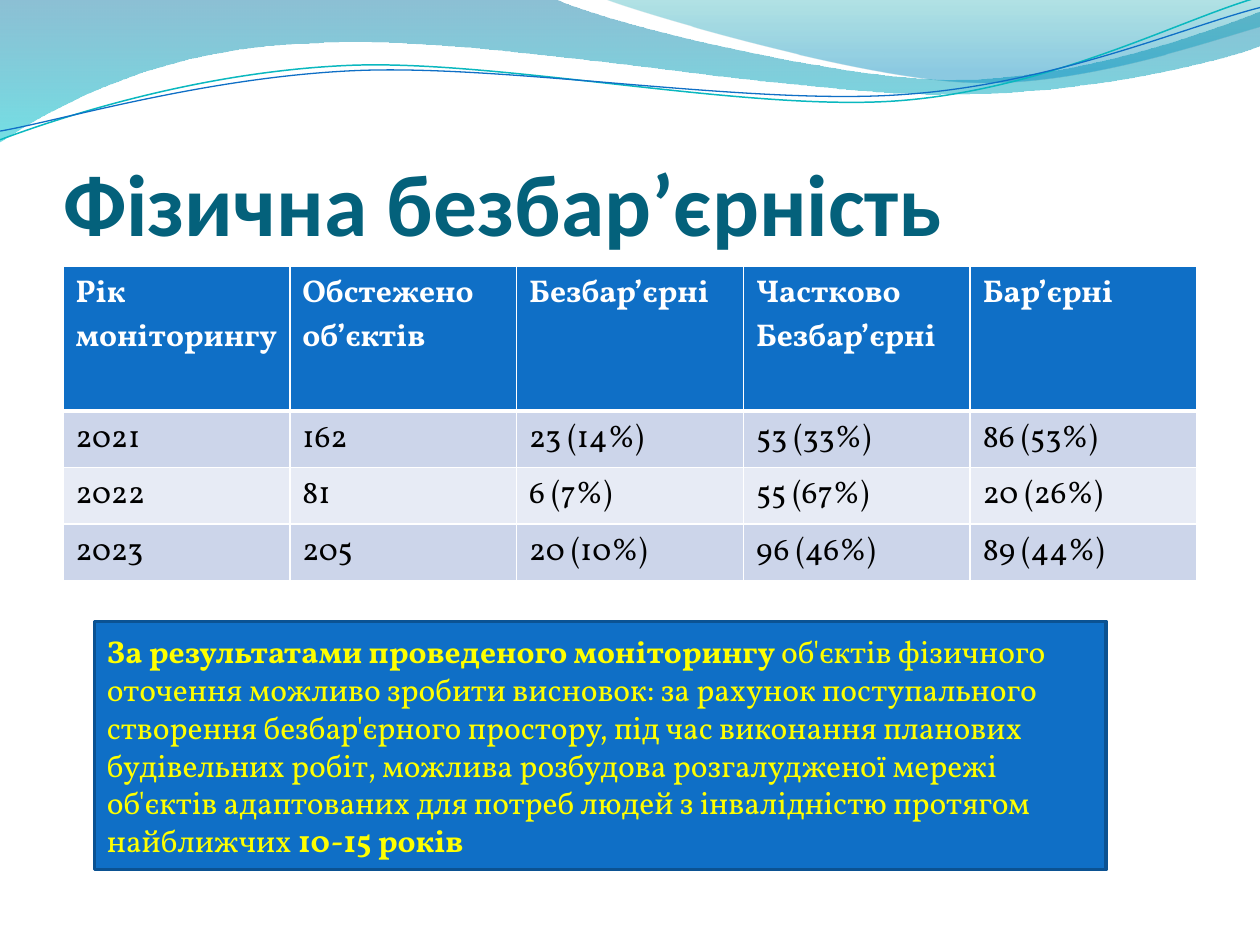
from dataclasses import dataclass

from lxml import etree
from pptx import Presentation
from pptx.dml.color import RGBColor
from pptx.enum.shapes import MSO_SHAPE
from pptx.enum.text import MSO_ANCHOR, MSO_AUTO_SIZE, PP_ALIGN
from pptx.oxml.ns import qn
from pptx.util import Pt

RECTANGLE = MSO_SHAPE.RECTANGLE
BOTTOM, MIDDLE = MSO_ANCHOR.BOTTOM, MSO_ANCHOR.MIDDLE
NO_AUTOFIT = MSO_AUTO_SIZE.NONE
LEFT = PP_ALIGN.LEFT
TITLE_ONLY = 5


@dataclass(frozen=True)
class Theme:
    heading_font: str = "Calibri"
    body_font: str = "Vollkorn"
    title_size: int = 50
    body_size: int = 18
    title: str = "04617B"
    accent: str = "0F6FC6"
    accent_dark: str = "0B5292"
    teal: str = "0AB8BF"
    odd_row: str = "CCD5EA"
    even_row: str = "E7EBF5"
    white: str = "FFFFFF"
    black: str = "000000"
    highlight: str = "FFFF00"
    broad_wave: tuple = ((0, "0074A1", 45), (1, "00C6CF", 55))
    corner_wave: tuple = ((0, "00A1A9", 30), (0.8, "008BBF", 45))


THEME = Theme()

BROAD_WAVE = [
    (0, 0),
    [(316.8, -0.7)],
    [(342.7, 12.2), (478.1, 45.4), (545.8, 45.4)],
    [(614.2, 45.4), (689.8, 18.7), (720, 6.5)],
    [(720.7, 25.9)],
    [(707.8, 31.7), (626.4, 54.7), (537.1, 54)],
    [(447.8, 54), (275, 20.2), (185, 24.5)],
    [(92.9, 25.9), (33.1, 59.8), (-0.7, 81.4)],
    [(0, 0)],
]
CORNER_WAVE = [
    (344.9, -0.7),
    [(366.5, 7.9), (491, 44.6), (553.7, 46.8)],
    [(616.3, 49.7), (691.9, 23), (720, 15.1)],
    [(720, 0)],
    [(344.9, -0.7)],
]
TEAL_STRAND = [
    (0, 79.9),
    [(34.6, 67), (113.8, 41), (199.4, 37.4)],
    [(284.4, 33.8), (427, 64.1), (513.4, 57.6)],
    [(599.8, 51.1), (675.4, 10.8), (718.6, -1.4)],
]
BLUE_STRAND = [
    (0, 74.9),
    [(33.8, 69.1), (118.1, 43.9), (203.8, 40.3)],
    [(290.2, 36.7), (429.8, 60.5), (516.2, 54)],
    [(601.9, 48.2), (677.5, 15.1), (720, 4.3)],
]

MONITORING = [
    ["Рік моніторингу", "Обстежено об’єктів", "Безбар’єрні", "Частково Безбар’єрні", "Бар’єрні"],
    ["2021", "162", "23 (14%)", "53 (33%)", "86 (53%)"],
    ["2022", "81", "6 (7%)", "55 (67%)", "20 (26%)"],
    ["2023", "205", "20 (10%)", "96 (46%)", "89 (44%)"],
]
CONCLUSION = [
    ("За результатами проведеного моніторингу ", True),
    ("об'єктів фізичного оточення можливо зробити висновок: за рахунок поступального "
     "створення безбар'єрного простору, під час виконання планових будівельних робіт, "
     "можлива розбудова розгалудженої мережі об'єктів адаптованих для потреб людей "
     "з інвалідністю протягом найближчих ", False),
    ("10-15 років", True),
]


def rgb(value):
    return RGBColor.from_string(value)


def style_font(font, name, size, color, bold=None):
    font.name = name
    font.size = Pt(size)
    font.color.rgb = rgb(color)
    font.bold = bold


def bend_segments(outline_shape, segments):
    lines = iter(list(outline_shape.element.iter(qn("a:lnTo"))))
    for segment in segments:
        first, *rest = [next(lines) for _ in segment]
        if rest:
            first.tag = qn("a:cubicBezTo")
        for line in rest:
            first.append(line[0])
            line.getparent().remove(line)


def add_outline(slide, outline, close):
    start, *segments = outline
    builder = slide.shapes.build_freeform(Pt(start[0]), Pt(start[1]))
    points = [(Pt(x), Pt(y)) for segment in segments for x, y in segment]
    builder.add_line_segments(points, close=close)
    outline_shape = builder.convert_to_shape()
    outline_shape.shadow.inherit = False
    bend_segments(outline_shape, segments)
    return outline_shape


def add_wave(slide, outline, gradient):
    wave = add_outline(slide, outline, close=True)
    wave.line.fill.background()
    wave.fill.gradient()
    wave.fill.gradient_angle = 270
    for stop, (position, color, _) in zip(wave.fill.gradient_stops, gradient):
        stop.position = position
        stop.color.rgb = rgb(color)
    stop_colors = wave.element.spPr.iter(qn("a:srgbClr"))
    for stop_color, (_, _, opacity) in zip(stop_colors, gradient):
        etree.SubElement(stop_color, qn("a:alpha"), val=str(opacity * 1000))


def add_strand(slide, outline, color, width):
    strand = add_outline(slide, outline, close=False)
    strand.fill.background()
    strand.line.color.rgb = rgb(color)
    strand.line.width = Pt(width)


def format_title(slide, text):
    title = slide.shapes.title
    title.element.getparent().append(title.element)
    title.left, title.top, title.width, title.height = Pt(36), Pt(55), Pt(648), Pt(90)
    frame = title.text_frame
    frame.text = text
    frame.auto_size = NO_AUTOFIT
    frame.vertical_anchor = BOTTOM
    frame.margin_left = frame.margin_right = frame.margin_bottom = 0
    frame.margin_top = Pt(3.6)
    heading = frame.paragraphs[0]
    heading.alignment = LEFT
    style_font(heading.font, THEME.heading_font, THEME.title_size, THEME.title, True)


def set_borders(cell, top, bottom):
    properties = cell._tc.get_or_add_tcPr()
    widths = {"a:lnL": 1, "a:lnR": 1, "a:lnT": top, "a:lnB": bottom}
    for index, (side, width) in enumerate(widths.items()):
        border = etree.Element(qn(side), w=str(Pt(width)))
        fill = etree.SubElement(border, qn("a:solidFill"))
        etree.SubElement(fill, qn("a:srgbClr"), val=THEME.white)
        properties.insert(index, border)


def add_monitoring_table(slide, rows):
    header_height, row_height = 82.6, 32.3
    height = header_height + row_height * (len(rows) - 1)
    table = slide.shapes.add_table(
        len(rows), len(rows[0]), Pt(36), Pt(152.2), Pt(648), Pt(height)
    ).table
    for row_index, values in enumerate(rows):
        is_header = row_index == 0
        table.rows[row_index].height = Pt(header_height if is_header else row_height)
        stripe = THEME.odd_row if row_index % 2 else THEME.even_row
        for column_index, value in enumerate(values):
            cell = table.cell(row_index, column_index)
            cell.text = value
            cell.fill.solid()
            cell.fill.fore_color.rgb = rgb(THEME.accent if is_header else stripe)
            set_borders(cell, 3 if row_index == 1 else 1, 3 if is_header else 1)
            color = THEME.white if is_header else THEME.black
            style_font(cell.text_frame.paragraphs[0].font, THEME.body_font,
                       THEME.body_size, color, is_header)


def add_conclusion(slide, phrases):
    panel = slide.shapes.add_shape(RECTANGLE, Pt(54), Pt(355), Pt(578), Pt(142))
    panel.shadow.inherit = False
    panel.fill.solid()
    panel.fill.fore_color.rgb = rgb(THEME.accent)
    panel.line.color.rgb = rgb(THEME.accent_dark)
    panel.line.width = Pt(2)
    frame = panel.text_frame
    frame.word_wrap = True
    frame.vertical_anchor = MIDDLE
    paragraph = frame.paragraphs[0]
    paragraph.alignment = LEFT
    style_font(paragraph.font, THEME.body_font, THEME.body_size, THEME.highlight)
    for phrase, bold in phrases:
        run = paragraph.add_run()
        run.text = phrase
        run.font.bold = bold


def main():
    presentation = Presentation()
    presentation.slide_width, presentation.slide_height = Pt(720), Pt(540)
    slide = presentation.slides.add_slide(presentation.slide_layouts[TITLE_ONLY])
    add_wave(slide, BROAD_WAVE, THEME.broad_wave)
    add_wave(slide, CORNER_WAVE, THEME.corner_wave)
    add_strand(slide, TEAL_STRAND, THEME.teal, 0.85)
    add_strand(slide, BLUE_STRAND, THEME.accent, 0.75)
    format_title(slide, "Фізична безбар’єрність")
    add_monitoring_table(slide, MONITORING)
    add_conclusion(slide, CONCLUSION)
    presentation.save("out.pptx")


if __name__ == "__main__":
    main()
